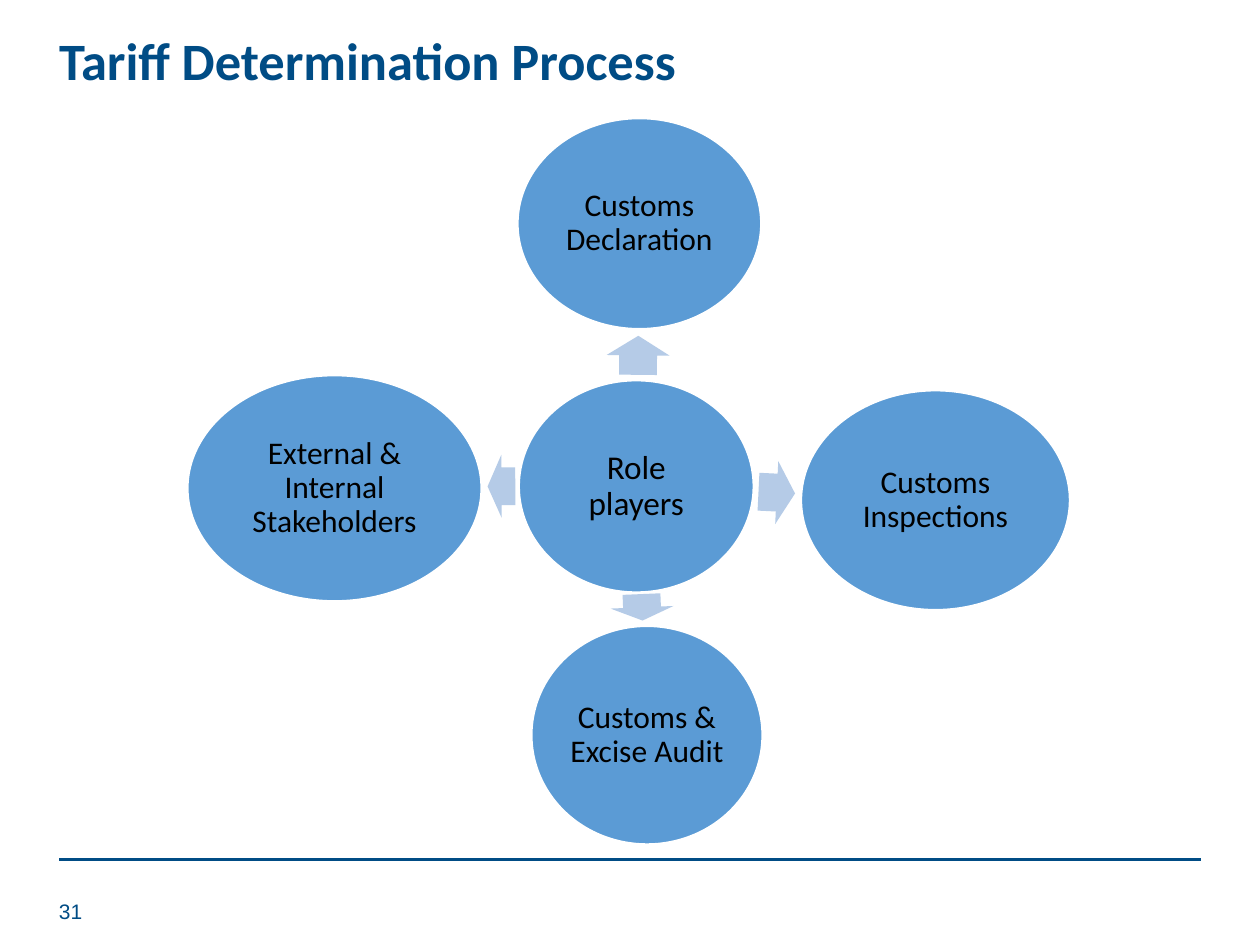
from pptx import Presentation
from pptx.dml.color import RGBColor
from pptx.enum.shapes import MSO_CONNECTOR, MSO_SHAPE
from pptx.enum.text import MSO_ANCHOR, PP_ALIGN
from pptx.oxml.ns import qn
from pptx.util import Inches, Pt
from lxml import etree

OVAL, ARROW = MSO_SHAPE.OVAL, MSO_SHAPE.RIGHT_ARROW
LINE = MSO_CONNECTOR.STRAIGHT
MIDDLE, CENTER = MSO_ANCHOR.MIDDLE, PP_ALIGN.CENTER

NAVY = RGBColor(0x00, 0x4C, 0x85)
BLUE = RGBColor(0x5B, 0x9B, 0xD5)
PALE = RGBColor(0xB5, 0xCB, 0xE7)
WHITE = RGBColor(0xFF, 0xFF, 0xFF)
BLACK = RGBColor(0x00, 0x00, 0x00)

prs = Presentation()
prs.slide_width, prs.slide_height = Inches(10), Inches(7.5)
slide = prs.slides.add_slide(prs.slide_layouts[6])
shapes = slide.shapes


def write(shape, text, face, size, color):
    frame = shape.text_frame
    frame.word_wrap = True
    frame.vertical_anchor = MIDDLE
    para = frame.paragraphs[0]
    para.text = text
    para.font.name = face
    para.font.size = Pt(size)
    para.font.color.rgb = color
    return para


def add(kind, box, fill):
    shape = shapes.add_shape(kind, *map(Inches, box))
    shape.shadow.inherit = False
    shape.fill.solid()
    shape.fill.fore_color.rgb = fill
    return shape


# Footer rule
rule = shapes.add_connector(LINE, Inches(0.47), Inches(6.82), Inches(9.53), Inches(6.82))
rule.line.color.rgb = NAVY
rule.line.width = Pt(2)
etree.SubElement(rule._element.spPr, qn("a:effectLst"))

# Title and page number
title = shapes.add_textbox(Inches(0.37), Inches(0.23), Inches(8.62), Inches(0.55))
para = write(title, "Tariff Determination Process", "Calibri", 30, NAVY)
para.font.bold = True
para.line_spacing = 0.9
page = shapes.add_textbox(Inches(0.37), Inches(7.03), Inches(0.46), Inches(0.4))
write(page, "31", "Arial", 12, NAVY)

# Hub and the four role players: text, size, box
players = [
    ("Role players", 19, (4.12, 3.02, 1.86, 1.68)),
    ("Customs Declaration", 18, (4.11, 0.94, 1.93, 1.67)),
    ("Customs Inspections", 18, (6.36, 3.1, 2.13, 1.74)),
    ("Customs & Excise Audit", 18, (4.22, 4.97, 1.83, 1.73)),
    ("External & Internal Stakeholders", 18, (1.49, 2.98, 2.33, 1.79)),
]
for text, size, box in players:
    oval = add(OVAL, box, BLUE)
    oval.line.color.rgb = WHITE
    oval.line.width = Pt(1)
    frame = oval.text_frame
    frame.margin_left = frame.margin_right = Inches(0.03)
    frame.margin_top = frame.margin_bottom = Inches(0.03)
    para = write(oval, text, "Calibri", size, BLACK)
    para.alignment = CENTER
    para.line_spacing = 0.9

# Arrows from the hub: left, top, width, turn
arrows = [
    (4.91, 2.57, 0.31, 270.6),
    (6.02, 3.66, 0.29, 2.8),
    (4.99, 4.57, 0.21, 87.6),
    (3.87, 3.61, 0.22, 179.6),
]
for left, top, width, turn in arrows:
    arrow = add(ARROW, (left, top, width, 0.5), PALE)
    arrow.line.fill.background()
    arrow.adjustments[0] = 0.6
    arrow.adjustments[1] = 0.5
    arrow.rotation = turn

prs.save("out.pptx")
